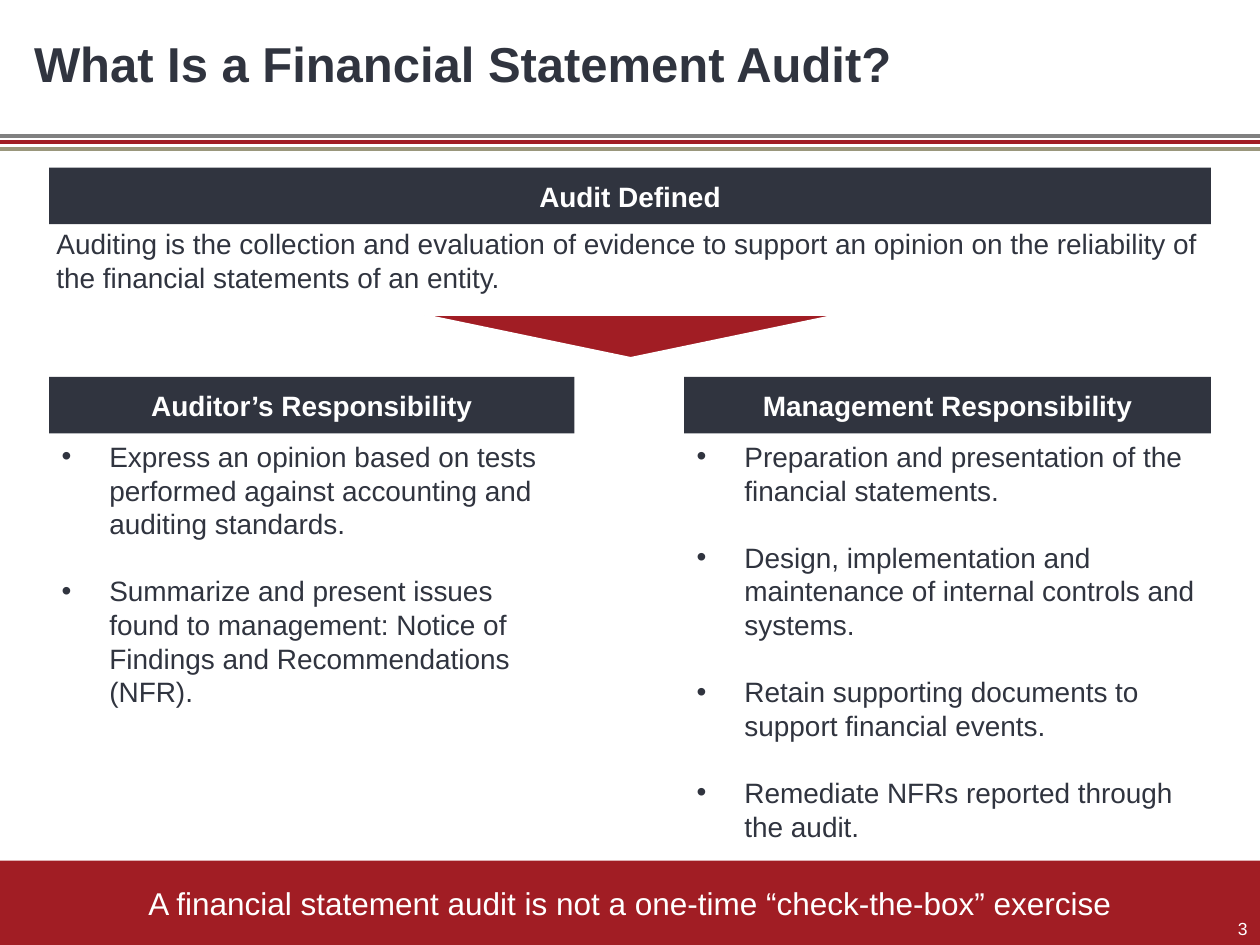
from dataclasses import dataclass
from pptx import Presentation
from pptx.dml.color import RGBColor
from pptx.enum.shapes import MSO_CONNECTOR, MSO_SHAPE
from pptx.enum.text import MSO_ANCHOR, PP_ALIGN
from pptx.oxml.ns import qn
from pptx.util import Inches, Pt
from lxml.etree import SubElement


@dataclass(frozen=True)
class Theme:
    """Colours, font and type sizes of the slide."""
    dark: str = "30343F"
    red: str = "A11D24"
    gray: str = "808080"
    tan: str = "9A977C"
    white: str = "FFFFFF"
    font: str = "Arial"
    head: int = 28
    note: int = 18
    body: int = 16
    small: int = 10


THEME = Theme()
DUTIES = [
    (0.39, 4.17, "Auditor’s Responsibility", [
        "Express an opinion based on tests performed against accounting and auditing standards.",
        "Summarize and present issues found to management: Notice of Findings and "
        "Recommendations (NFR).",
    ]),
    (5.43, 4.18, "Management Responsibility", [
        "Preparation and presentation of the financial statements.",
        "Design, implementation and maintenance of internal controls and systems.",
        "Retain supporting documents to support financial events.",
        "Remediate NFRs reported through the audit.",
    ]),
]


def color(code):
    """Turn a hex code into a colour."""
    return RGBColor.from_string(code)


def style(para, size, tint, bold=False, align=PP_ALIGN.LEFT):
    """Set the type of one paragraph."""
    para.alignment = align
    for run in para.runs:
        font = run.font
        font.name, font.size, font.bold = THEME.font, Pt(size), bold
        font.color.rgb = color(tint)


def place(shape, box):
    """Move a shape to left, top, width and height in inches."""
    shape.left, shape.top, shape.width, shape.height = map(Inches, box)


def add_title(slide, text):
    """Fill and place the title."""
    title = slide.shapes.title
    place(title, (0.17, 0, 8.17, 1))
    title.text_frame.text = text
    title.text_frame.vertical_anchor = MSO_ANCHOR.MIDDLE
    style(title.text_frame.paragraphs[0], THEME.head, THEME.dark, True)


def add_rule(slide, top, tint):
    """Draw a line across the slide."""
    rule = slide.shapes.add_connector(
        MSO_CONNECTOR.STRAIGHT, Inches(0), Inches(top), Inches(10), Inches(top))
    rule.line.color.rgb = color(tint)
    rule.line.width = Pt(2.25)
    SubElement(rule._element.spPr, qn("a:effectLst"))


def add_shape(slide, kind, box, tint):
    """Draw a filled shape without a line."""
    shape = slide.shapes.add_shape(kind, *map(Inches, box))
    shape.shadow.inherit = False
    shape.fill.solid()
    shape.fill.fore_color.rgb = color(tint)
    shape.line.fill.background()
    return shape


def add_bar(slide, box, text, tint, size, bold):
    """Draw a bar with centred white text."""
    frame = add_shape(slide, MSO_SHAPE.RECTANGLE, box, tint).text_frame
    frame.text = text
    frame.vertical_anchor = MSO_ANCHOR.MIDDLE
    style(frame.paragraphs[0], size, THEME.white, bold, PP_ALIGN.CENTER)


def add_text(slide, box, text):
    """Add a wrapped body text box and return its frame."""
    frame = slide.shapes.add_textbox(*map(Inches, box)).text_frame
    frame.word_wrap = True
    frame.text = text
    for para in frame.paragraphs:
        style(para, THEME.body, THEME.dark)
    return frame


def add_list(slide, box, items):
    """Add a bulleted list with a line of space between items."""
    frame = add_text(slide, box, "\n".join(items))
    for i, para in enumerate(frame.paragraphs):
        props = para._p.get_or_add_pPr()
        props.set("marL", str(Inches(0.38)))
        props.set("indent", str(Inches(-0.38)))
        if i:
            para.space_before = Pt(19.2)
        SubElement(props, qn("a:buFont"), typeface=THEME.font)
        SubElement(props, qn("a:buChar"), char="•")


def add_number(slide, text):
    """Add the slide number in the lower right corner."""
    frame = add_text(slide, (7.67, 7.1, 2.33, 0.4), text)
    frame.vertical_anchor = MSO_ANCHOR.BOTTOM
    style(frame.paragraphs[0], THEME.small, THEME.white, align=PP_ALIGN.RIGHT)


def main():
    """Build and save the slide."""
    deck = Presentation()
    deck.slide_width, deck.slide_height = Inches(10), Inches(7.5)
    slide = deck.slides.add_slide(deck.slide_layouts[5])
    for i, tint in enumerate((THEME.gray, THEME.red, THEME.tan)):
        add_rule(slide, 1.08 + 0.05 * i, tint)
    add_title(slide, "What Is a Financial Statement Audit?")
    add_bar(slide, (0, 6.83, 10, 0.67),
            "A financial statement audit is not a one-time “check-the-box” exercise",
            THEME.red, THEME.note, False)
    add_bar(slide, (0.39, 1.33, 9.22, 0.45), "Audit Defined", THEME.dark, THEME.body, True)
    add_text(slide, (0.35, 1.75, 9.3, 0.64),
             "Auditing is the collection and evaluation of evidence to support an opinion "
             "on the reliability of the financial statements of an entity.")
    arrow = add_shape(slide, MSO_SHAPE.ISOSCELES_TRIANGLE, (3.37, 2.5, 3.27, 0.34), THEME.red)
    arrow.rotation = 180
    arrow.line.color.rgb = color(THEME.white)
    arrow.line.width = Pt(1)
    for left, width, head, items in DUTIES:
        add_bar(slide, (left, 2.99, width, 0.45), head, THEME.dark, THEME.body, True)
        add_list(slide, (left, 3.44, width, 3.33), items)
    add_number(slide, "3")
    deck.save("out.pptx")


if __name__ == "__main__":
    main()
